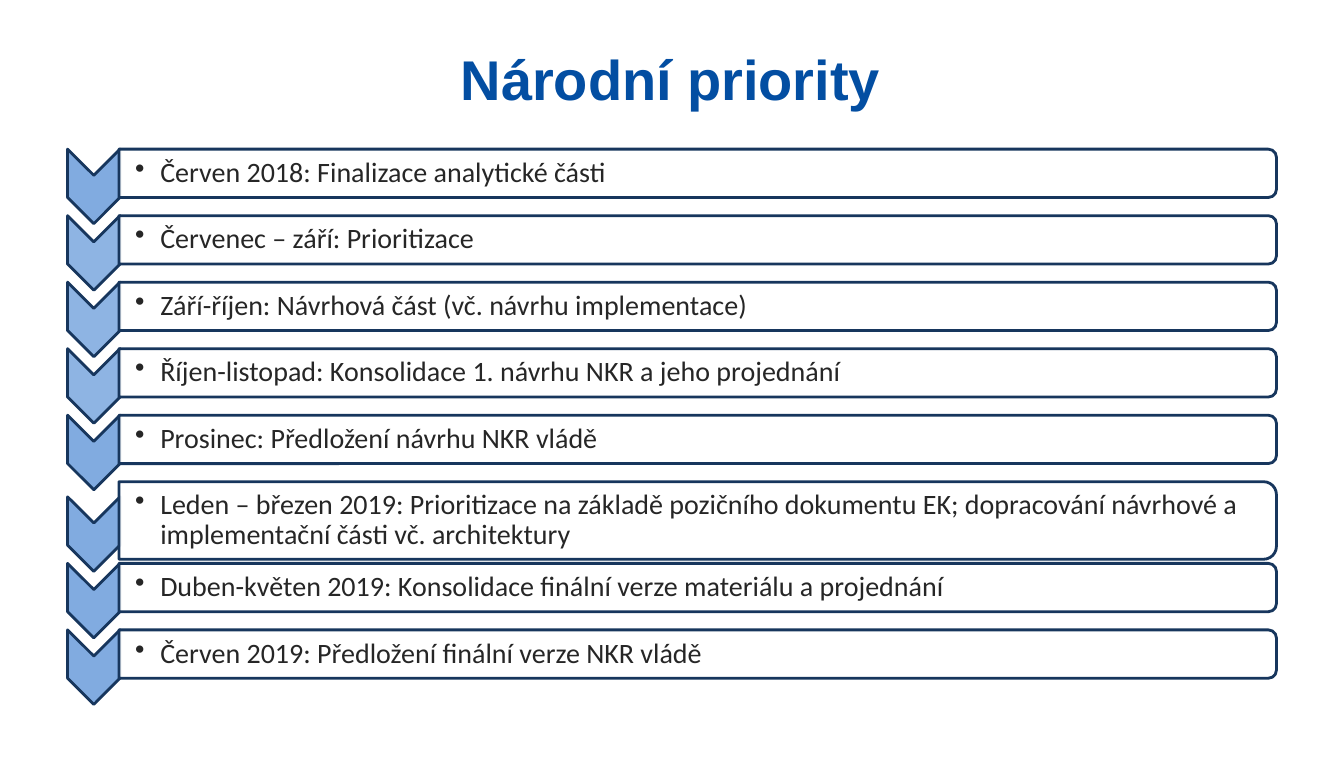
"""Build the slide with the national priorities timeline."""
import pptx
import pptx.dml.color
import pptx.enum.shapes
import pptx.enum.text
import pptx.oxml.ns
import pptx.util
from lxml import etree
from pptx.util import Inches, Pt

COLORS = {
    "title": "034EA2",
    "text": "262626",
    "line": "17365D",
    "bar": "FFFFFF",
    "blue": "81ABE0",
    "light": "8EB4E3",
}
STEPS = [
    ("Červen 2018: Finalizace analytické části", "blue"),
    ("Červenec – září: Prioritizace", "light"),
    ("Září-říjen: Návrhová část (vč. návrhu implementace)", "light"),
    ("Říjen-listopad: Konsolidace 1. návrhu NKR a jeho projednání", "light"),
    ("Prosinec: Předložení návrhu NKR vládě", "blue"),
    ("Leden – březen 2019: Prioritizace na základě pozičního dokumentu EK; "
     "dopracování návrhové a implementační části vč. architektury", "blue"),
    ("Duben-květen 2019: Konsolidace finální verze materiálu a projednání", "blue"),
    ("Červen 2019: Předložení finální verze NKR vládě", "blue"),
]
TOP, PITCH = 1.48, 0.66
CHEVRON_LEFT, CHEVRON_W, CHEVRON_H = 0.67, 0.52, 0.74
BAR_LEFT, BAR_W, BAR_H = 1.18, 11.48, 0.48
TALL_ROW, TALL_H, TALL_SHIFT = 5, 0.77, 0.15


def rgb(name):
    return pptx.dml.color.RGBColor.from_string(COLORS[name])


def add_turned_shape(s, kind, left, top, width, height, color):
    """Add a shape turned by 90 degrees that covers the given area."""
    x = left + (width - height) / 2
    y = top + (height - width) / 2
    sp = s.shapes.add_shape(kind, Inches(x), Inches(y), Inches(height), Inches(width))
    sp.rotation = 90
    sp.shadow.inherit = False
    sp.fill.solid()
    sp.fill.fore_color.rgb = rgb(color)
    sp.line.color.rgb = rgb("line")
    sp.line.width = Pt(2)
    return sp


def set_alpha(sp, percent):
    clr = sp.fill._xPr.find(".//" + pptx.oxml.ns.qn("a:srgbClr"))
    etree.SubElement(clr, pptx.oxml.ns.qn("a:alpha"), val=str(percent * 1000))


def add_text(s, left, top, width, height, text, font, size, color):
    """Add a wrapped, vertically centred text box and return its frame."""
    sp = s.shapes.add_textbox(Inches(left), Inches(top), Inches(width), Inches(height))
    tf = sp.text_frame
    tf.word_wrap = True
    tf.vertical_anchor = pptx.enum.text.MSO_ANCHOR.MIDDLE
    p = tf.paragraphs[0]
    p.text = text
    p.font.name = font
    p.font.size = Pt(size)
    p.font.color.rgb = rgb(color)
    return tf


def add_bullet(p, indent):
    pPr = p._p.get_or_add_pPr()
    pPr.set("marL", str(Inches(indent)))
    pPr.set("indent", str(-Inches(indent)))
    bullet = etree.Element(pptx.oxml.ns.qn("a:buChar"), char="•")
    pPr.insert_element_before(bullet, "a:tabLst", "a:defRPr", "a:extLst")


def add_step(s, row, text, color):
    """Add one row: chevron, rounded bar and bulleted text."""
    shapes = pptx.enum.shapes.MSO_SHAPE
    top = TOP + row * PITCH
    chevron_top = top + (TALL_SHIFT if row >= TALL_ROW else 0)
    bar_top = top + (TALL_SHIFT if row > TALL_ROW else 0)
    bar_h = TALL_H if row == TALL_ROW else BAR_H
    add_turned_shape(s, shapes.CHEVRON, CHEVRON_LEFT, chevron_top,
                     CHEVRON_W, CHEVRON_H, color)
    bar = add_turned_shape(s, shapes.ROUND_2_SAME_RECTANGLE, BAR_LEFT, bar_top,
                           BAR_W, bar_h, "bar")
    set_alpha(bar, 90)
    tf = add_text(s, BAR_LEFT, bar_top + 0.02, BAR_W - 0.02, bar_h - 0.04,
                  text, "Calibri", 20, "text")
    tf.margin_left = Inches(0.16)
    tf.margin_top = tf.margin_right = tf.margin_bottom = Inches(0.01)
    p = tf.paragraphs[0]
    p.line_spacing = 0.9
    add_bullet(p, 0.25)


def main():
    prs = pptx.Presentation()
    prs.slide_width, prs.slide_height = Inches(13.33), Inches(7.68)
    s = prs.slides.add_slide(prs.slide_layouts[6])
    title = add_text(s, 0.65, 0.31, 12, 0.94, "Národní priority", "Arial", 40, "title")
    title.paragraphs[0].font.bold = True
    title.paragraphs[0].alignment = pptx.enum.text.PP_ALIGN.CENTER
    for row, (text, color) in enumerate(STEPS):
        add_step(s, row, text, color)
    prs.save("out.pptx")


if __name__ == "__main__":
    main()
